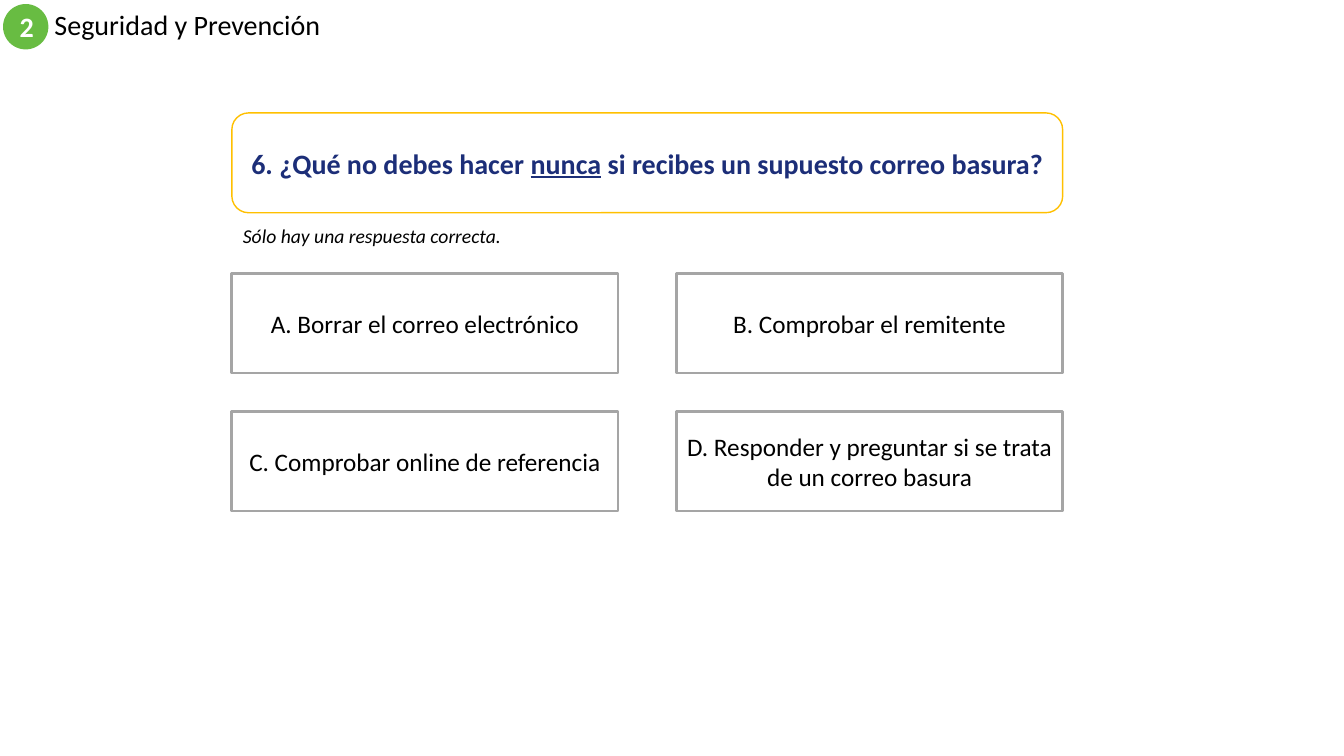
"""Build a quiz slide with one question and four possible answers."""
import pptx
import pptx.dml.color
import pptx.enum.shapes
import pptx.enum.text
import pptx.util

Inches = pptx.util.Inches
SHAPES = pptx.enum.shapes.MSO_SHAPE
ALIGN = pptx.enum.text.PP_ALIGN
ANCHOR = pptx.enum.text.MSO_ANCHOR

SECTION_NUMBER = "2"
SECTION_TITLE = "Seguridad y Prevención"
QUESTION = [
    ("6. ¿Qué no debes hacer ", {}),
    ("nunca", {"underline": True}),
    (" si recibes un supuesto correo basura?", {}),
]
HINT = "Sólo hay una respuesta correcta."
ANSWERS = [
    "A. Borrar el correo electrónico",
    "B. Comprobar el remitente",
    "C. Comprobar online de referencia",
    "D. Responder y preguntar si se trata de un correo basura",
]

THEME = {
    "font": "Calibri",
    "colors": {
        "text": "000000", "white": "FFFFFF", "badge": "68BC42",
        "question": "1C2E78", "question_line": "FFC000", "answer_line": "A5A5A5",
    },
    "styles": {
        "title": {"size": 20, "color": "text", "bold": False},
        "badge": {"size": 20, "color": "white", "bold": True},
        "question": {"size": 20, "color": "question", "bold": True},
        "hint": {"size": 14, "color": "text", "italic": True},
        "answer": {"size": 18, "color": "text"},
    },
}

LEFT, WIDTH, BOX_HEIGHT = 2.3, 8.24, 0.99
ANSWER_TOP, ANSWER_WIDTH, ROW_STEP = 2.71, 3.83, 1.37
COLUMNS = 2
COLUMN_STEP = WIDTH - ANSWER_WIDTH


def color(name):
    """Return a theme colour."""
    return pptx.dml.color.RGBColor.from_string(THEME["colors"][name])


def write(box, spans, style, align, anchor):
    """Write formatted spans into the first paragraph of a box."""
    frame = box.text_frame
    frame.word_wrap = True
    frame.vertical_anchor = anchor
    para = frame.paragraphs[0]
    para.alignment = align
    for text, extra in spans:
        span = para.add_run()
        span.text = text
        values = {"name": THEME["font"], **THEME["styles"][style], **extra}
        span.font.color.rgb = color(values.pop("color"))
        values["size"] = pptx.util.Pt(values["size"])
        for key, value in values.items():
            setattr(span.font, key, value)
    return para


def add_box(page, kind, place, fill, spans, style, line=None, weight=1):
    """Add a filled shape with centred text and an optional outline."""
    box = page.shapes.add_shape(kind, *map(Inches, place))
    box.shadow.inherit = False
    box.fill.solid()
    box.fill.fore_color.rgb = color(fill)
    if line:
        box.line.color.rgb = color(line)
        box.line.width = pptx.util.Pt(weight)
    else:
        box.line.fill.background()
    write(box, spans, style, ALIGN.CENTER, ANCHOR.MIDDLE)
    return box


def main():
    """Create the deck and save it."""
    deck = pptx.Presentation()
    deck.slide_width, deck.slide_height = Inches(13.33), Inches(7.5)
    page = deck.slides.add_slide(deck.slide_layouts.get_by_name("Title Only"))

    title = page.shapes.title
    for key, value in zip(("left", "top", "width", "height"), (0.44, 0.04, 8, 0.45)):
        setattr(title, key, Inches(value))
    para = write(title, [(SECTION_TITLE, {})], "title", ALIGN.LEFT, ANCHOR.MIDDLE)
    para.line_spacing = 0.9

    add_box(page, SHAPES.OVAL, (0.03, 0.04, 0.45, 0.45), "badge",
            [(SECTION_NUMBER, {})], "badge")
    add_box(page, SHAPES.ROUNDED_RECTANGLE, (LEFT, 1.12, WIDTH, BOX_HEIGHT), "white",
            QUESTION, "question", "question_line")

    hint = page.shapes.add_textbox(*map(Inches, (2.31, 2.17, 3.22, 0.34)))
    write(hint, [(HINT, {})], "hint", ALIGN.LEFT, ANCHOR.TOP)

    for index, answer in enumerate(ANSWERS):
        row, column = divmod(index, COLUMNS)
        place = (LEFT + column * COLUMN_STEP, ANSWER_TOP + row * ROW_STEP,
                 ANSWER_WIDTH, BOX_HEIGHT)
        add_box(page, SHAPES.RECTANGLE, place, "white", [(answer, {})],
                "answer", "answer_line", 2)

    deck.save("out.pptx")


if __name__ == "__main__":
    main()
